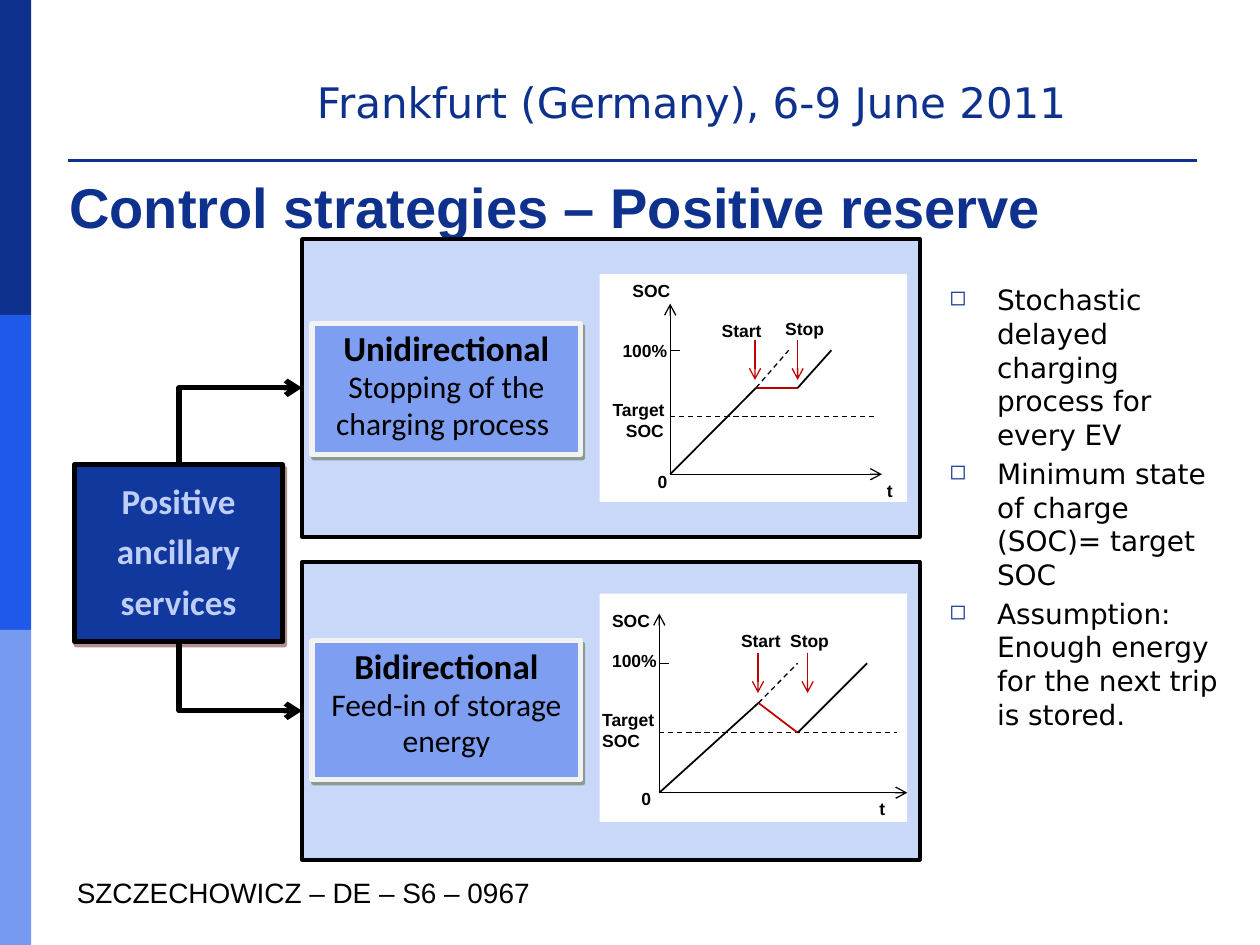
"""Slide on control strategies for positive reserve from electric vehicles."""
from dataclasses import dataclass

from lxml.etree import SubElement
from pptx import Presentation
from pptx.dml.color import RGBColor
from pptx.enum.dml import MSO_LINE
from pptx.enum.shapes import MSO_CONNECTOR as LINK, MSO_SHAPE
from pptx.enum.text import MSO_ANCHOR, PP_ALIGN as ALIGN
from pptx.oxml.ns import qn
from pptx.util import Cm, Pt


@dataclass(frozen=True)
class Theme:
    navy: str = "0E318D"
    blue: str = "1F59E9"
    sky: str = "779AF1"
    root: str = "10389D"
    root_text: str = "BECEF9"
    root_shadow: str = "622423"
    panel: str = "C9D7F9"
    card: str = "7E9EF2"
    card_line: str = "F2F2F2"
    card_shadow: str = "4E6128"
    black: str = "000000"
    white: str = "FFFFFF"
    red: str = "C00000"
    sans: str = "Arial"
    box_font: str = "Calibri"
    body_font: str = "DejaVu Sans"
    title: int = 32
    event: int = 24
    heading: int = 20
    detail: int = 18
    body: int = 16
    label: int = 10


THEME = Theme()

EVENT = "Frankfurt (Germany), 6-9 June 2011"
TITLE = "Control strategies – Positive reserve"
FOOTER = "SZCZECHOWICZ – DE – S6 – 0967"
ROOT = "Positive ancillary services"
NOTES = [
    "Stochastic delayed charging process for every EV",
    "Minimum state of charge (SOC)= target SOC",
    "Assumption: Enough energy for the next trip is stored.",
]
STRATEGIES = [
    dict(
        name="Unidirectional", detail="Stopping of the charging process ",
        top=4.82, card_top=6.52, card_height=2.64, plot_top=5.52,
        leaves=9.37, enters=7.82,
        origin=(13.51, 9.56), axis_top=6.12, axis_right=17.78, full=7.06,
        target=8.4, target_right=17.63, start=(15.24, 7.82), stop=(16.08, 7.82),
        planned_x=15.9, resumed_x=16.76, signals=(15.22, 16.08),
        target_align=ALIGN.CENTER,
        labels=[("SOC", 12.5, 5.52), ("100%", 12.3, 6.73), ("0", 13.01, 9.37),
                ("t", 17.63, 9.55), ("Start", 14.3, 6.32), ("Stop", 15.58, 6.29),
                ("Target\nSOC", 12.1, 7.92)],
    ),
    dict(
        name="Bidirectional", detail="Feed-in of storage energy",
        top=11.33, card_top=12.92, card_height=2.79, plot_top=11.97,
        leaves=12.93, enters=14.33,
        origin=(13.29, 15.98), axis_top=12.37, axis_right=18.29, full=13.37,
        target=14.77, target_right=18.08, start=(15.29, 14.17), stop=(16.08, 14.77),
        planned_x=16.08, resumed_x=17.48, signals=(15.28, 16.28),
        target_align=ALIGN.LEFT,
        labels=[("SOC", 12.09, 12.17), ("100%", 12.09, 12.98), ("0", 12.68, 15.77),
                ("t", 17.48, 15.97), ("Start", 14.69, 12.57), ("Stop", 15.68, 12.57),
                ("Target\nSOC", 11.89, 14.17)],
    ),
]

ROOT_CENTRE, PANEL_LEFT = 3.61, 6.09

prs = Presentation()
prs.slide_width, prs.slide_height = Cm(25.4), Cm(19.05)
shapes = prs.slides.add_slide(prs.slide_layouts[6]).shapes


def rgb(colour):
    return RGBColor.from_string(colour)


def style(paragraph, size, colour, font, bold=False):
    for run in paragraph.runs:
        run.font.size, run.font.name, run.font.bold = Pt(size), font, bold
        run.font.color.rgb = rgb(colour)


def add_text(text, left, top, width, height, size, colour, font, bold=False,
             anchor=MSO_ANCHOR.TOP):
    frame = shapes.add_textbox(Cm(left), Cm(top), Cm(width), Cm(height)).text_frame
    frame.word_wrap, frame.vertical_anchor = True, anchor
    frame.text = text
    for paragraph in frame.paragraphs:
        style(paragraph, size, colour, font, bold)
    return frame


def add_box(left, top, width, height, fill, outline=None, weight=0, shadow=None):
    box = shapes.add_shape(MSO_SHAPE.RECTANGLE, Cm(left), Cm(top), Cm(width), Cm(height))
    box.fill.solid()
    box.fill.fore_color.rgb = rgb(fill)
    if outline:
        box.line.color.rgb, box.line.width = rgb(outline), Pt(weight)
    else:
        box.line.fill.background()
    box.shadow.inherit = False
    if shadow:
        effects = box._element.spPr.find(qn("a:effectLst"))
        outer = SubElement(effects, qn("a:outerShdw"), dist=str(Pt(2.2)),
                           dir=str(63 * 60000), algn="ctr", rotWithShape="0")
        tint = SubElement(outer, qn("a:srgbClr"), val=shadow)
        SubElement(tint, qn("a:alpha"), val="50000")
    frame = box.text_frame
    frame.word_wrap, frame.vertical_anchor = True, MSO_ANCHOR.TOP
    return box


def add_rule_table(left, top, width, height):
    table = shapes.add_table(1, 1, Cm(left), Cm(top), Cm(width), Cm(height)).table
    table.first_row = table.horz_banding = False
    cell = table.cell(0, 0)
    cell.margin_left = cell.margin_right = cell.margin_top = cell.margin_bottom = 0
    SubElement(cell.text_frame.paragraphs[0]._p, qn("a:endParaRPr"), sz="800")
    borders = cell._tc.get_or_add_tcPr()
    for side in ("lnL", "lnR", "lnT"):
        SubElement(SubElement(borders, qn(f"a:{side}"), w="0"), qn("a:noFill"))
    bottom = SubElement(borders, qn("a:lnB"), w=str(Pt(2.25)))
    SubElement(SubElement(bottom, qn("a:solidFill")), qn("a:srgbClr"), val=THEME.navy)
    cell.fill.background()


def add_line(begin, end, colour=THEME.black, weight=0.75, dashed=False, arrow=False,
             link=LINK.STRAIGHT):
    line = shapes.add_connector(link, *map(Cm, begin + end))
    line.line.color.rgb, line.line.width = rgb(colour), Pt(weight)
    if dashed:
        line.line.dash_style = MSO_LINE.DASH
    if arrow:
        SubElement(line.line._get_or_add_ln(), qn("a:tailEnd"), type="arrow")
    SubElement(line._element.spPr, qn("a:effectLst"))
    return line


def add_branch(leaves, enters):
    x, y = (ROOT_CENTRE + PANEL_LEFT) / 2, (leaves + enters) / 2
    across, down = abs(enters - leaves) / 2, (PANEL_LEFT - ROOT_CENTRE) / 2
    turn = 1 if enters < leaves else -1
    branch = add_line((x + across, y + turn * down), (x - across, y - turn * down),
                      weight=3, arrow=True, link=LINK.ELBOW)
    outline = branch._element.spPr
    outline.xfrm.set("rot", str(turn * 90 % 360 * 60000))
    outline.find(qn("a:prstGeom")).set("prst", "bentConnector2")


def add_panel(s):
    add_box(PANEL_LEFT, s["top"], 12.45, 6, THEME.panel, THEME.black, 2.25)
    card = add_box(6.29, s["card_top"], 5.42, s["card_height"], THEME.card,
                   THEME.card_line, 3, THEME.card_shadow)
    card.text_frame.text = f"{s['name']}\n{s['detail']}"
    name, detail = card.text_frame.paragraphs
    style(name, THEME.heading, THEME.black, THEME.box_font, True)
    style(detail, THEME.detail, THEME.black, THEME.box_font)
    for paragraph in (name, detail):
        paragraph.alignment, paragraph.line_spacing = ALIGN.CENTER, 0.96


def add_diagram(s):
    add_box(12.09, s["plot_top"], 6.2, 4.6, THEME.white)
    x, y = s["origin"]
    full, target = s["full"], s["target"]
    add_line((x, y), (x, s["axis_top"]), arrow=True)
    add_line((x, y), (s["axis_right"], y), arrow=True)
    add_line((x, full), (x + 0.19, full))
    add_line((x, target), (s["target_right"], target), dashed=True)
    add_line((x, y), s["start"], weight=1)
    add_line(s["start"], s["stop"], THEME.red, 1)
    add_line(s["stop"], (s["resumed_x"], full), weight=1)
    add_line(s["start"], (s["planned_x"], full), dashed=True)
    for signal in s["signals"]:
        add_line((signal, full - 0.2), (signal, full + 0.6), THEME.red, arrow=True)
    for text, left, top in s["labels"]:
        rows = text.count("\n") + 1
        label = add_text(text, left, top, 0.75 if text == "t" else 1.8,
                         0.25 + 0.44 * rows, THEME.label, THEME.black, THEME.sans, True)
        if rows > 1:
            label.paragraphs[-1].alignment = s["target_align"]


for step, shade in enumerate((THEME.navy, THEME.blue, THEME.sky)):
    add_box(0, 6.35 * step, 0.63, 6.35, shade)
add_rule_table(1.37, 2.72, 22.77, 0.51)
add_text(EVENT, 6.14, 1.42, 16.71, 1.27, THEME.event, THEME.navy, THEME.body_font)
add_text(TITLE, 1.15, 3.33, 22.86, 1.65, THEME.title, THEME.navy, THEME.sans, True,
         MSO_ANCHOR.MIDDLE)
add_text(FOOTER, 1.3, 17.53, 20.02, 0.94, THEME.body, THEME.black, THEME.sans)

notes = add_text("\n".join(NOTES), 18.89, 5.58, 6.2, 11.46, THEME.body, THEME.black,
                 THEME.body_font)
for order, note in enumerate(notes.paragraphs):
    marks = note._p.get_or_add_pPr()
    marks.set("marL", str(Cm(0.96)))
    marks.set("indent", str(-Cm(0.96)))
    SubElement(SubElement(marks, qn("a:buClr")), qn("a:srgbClr"), val=THEME.navy)
    SubElement(marks, qn("a:buSzPct"), val="75000")
    SubElement(marks, qn("a:buChar"), char="◻")
    if order:
        note.space_before = Pt(3.2)

root = add_box(1.5, 9.37, 4.2, 3.56, THEME.root, THEME.black, 3, THEME.root_shadow)
root.text_frame.text = ROOT
root_line = root.text_frame.paragraphs[0]
root_line.alignment, root_line.line_spacing = ALIGN.CENTER, 1.2
style(root_line, THEME.heading, THEME.root_text, THEME.box_font, True)

for strategy in STRATEGIES:
    add_panel(strategy)
    add_branch(strategy["leaves"], strategy["enters"])
    add_diagram(strategy)

prs.save("out.pptx")
